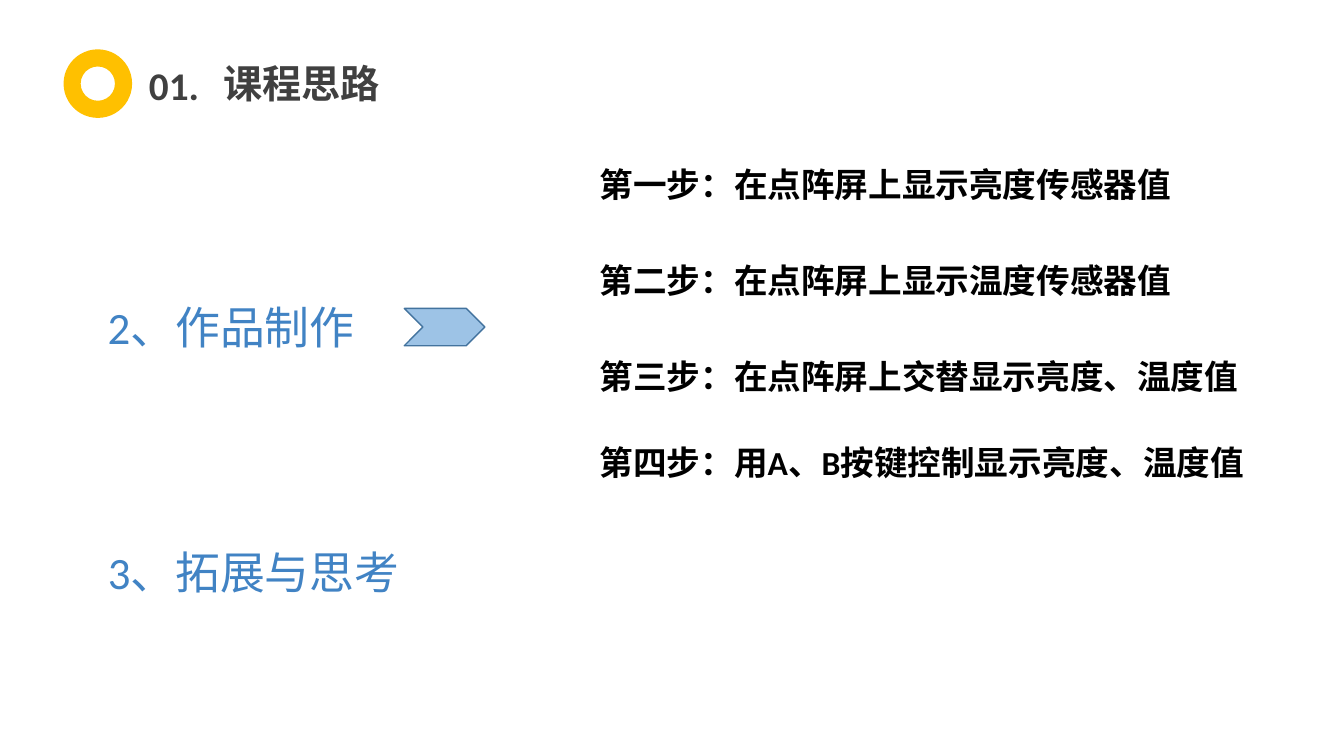
from pptx import Presentation
from pptx import util as u
from pptx.dml.color import RGBColor
from pptx.enum import shapes, text

COLORS = {
    "title": "404040",
    "ring": "FFC000",
    "section": "4183C4",
    "step": "000000",
    "arrow": "9DC3E6",
    "arrow_line": "43739E",
}

presentation = Presentation()
presentation.slide_width = u.Inches(13.33)
presentation.slide_height = u.Inches(7.5)
slide = presentation.slides.add_slide(presentation.slide_layouts[6])


def area(left, top, width, height):
    """Turn percentages of the slide's size into lengths."""
    across = presentation.slide_width / 100
    down = presentation.slide_height / 100
    return [round(n) for n in (left * across, top * down, width * across, height * down)]


def add_text(box, wording, size, color, bold=False, wrap=True, align=text.PP_ALIGN.LEFT):
    frame = slide.shapes.add_textbox(*area(*box)).text_frame
    frame.word_wrap = wrap
    paragraph = frame.paragraphs[0]
    paragraph.text = wording
    paragraph.alignment = align
    paragraph.font.name = "Calibri"
    paragraph.font.size = u.Pt(size)
    paragraph.font.bold = bold
    paragraph.font.color.rgb = RGBColor.from_string(COLORS[color])


# Title with its ring
add_text((15.75, 7.2, 13.35, 7.6), "课程思路", 28, "title", True, False, text.PP_ALIGN.CENTER)
add_text((10.35, 7.47, 5.63, 7.6), "01.", 28, "title", True, False)
ring = slide.shapes.add_shape(shapes.MSO_SHAPE.DONUT, *area(4.73, 6.53, 5.1, 9.07))
ring.shadow.inherit = False
ring.fill.solid()
ring.fill.fore_color.rgb = RGBColor.from_string(COLORS["ring"])
ring.line.fill.background()

# Sections on the left
for top, width, wording in [(38.93, 20.03, "2、作品制作"), (71.33, 23.4, "3、拓展与思考")]:
    add_text((7.28, top, width, 8.53), wording, 32, "section")

# Arrow from the section to its steps
arrow = slide.shapes.add_shape(shapes.MSO_SHAPE.CHEVRON, *area(30.08, 40.8, 6, 4.93))
arrow.shadow.inherit = False
arrow.fill.solid()
arrow.fill.fore_color.rgb = RGBColor.from_string(COLORS["arrow"])
arrow.line.color.rgb = RGBColor.from_string(COLORS["arrow_line"])
arrow.line.width = u.Pt(1)

# Steps on the right: three at an equal pitch, the last a little closer
first_top, pitch = 21.07, 12.67
steps = [
    (first_top, 44.63, "第一步：在点阵屏上显示亮度传感器值"),
    (first_top + pitch, 44.63, "第二步：在点阵屏上显示温度传感器值"),
    (first_top + 2 * pitch, 49.73, "第三步：在点阵屏上交替显示亮度、温度值"),
    (57.73, 50.1, "第四步：用A、B按键控制显示亮度、温度值"),
]
for top, width, wording in steps:
    add_text((43.88, top, width, 6.67), wording, 24, "step", True)

presentation.save("out.pptx")
